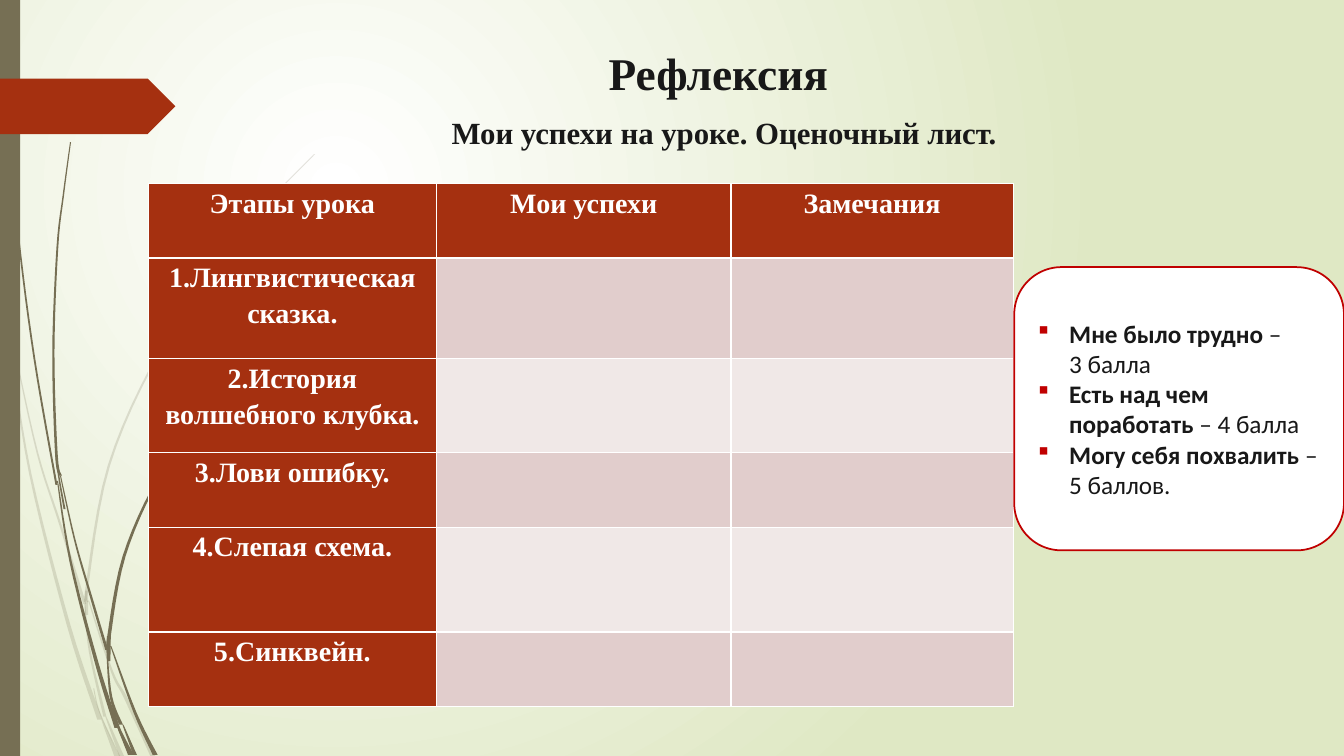
"""Build the lesson reflection slide with its score sheet."""
from dataclasses import dataclass
from lxml.etree import SubElement as Sub
from pptx import Presentation
from pptx.dml.color import RGBColor as Rgb
from pptx.enum.shapes import MSO_SHAPE as Kind
from pptx.enum.text import MSO_ANCHOR as Anchor, MSO_AUTO_SIZE as Fit, PP_ALIGN as Align
from pptx.oxml.ns import qn
from pptx.util import Pt

PX = 9144

@dataclass(frozen=True)
class Theme:
    """Colours, fonts and type sizes of the slide."""
    olive: str = "766F54"
    rust: str = "A53010"
    red: str = "C00000"
    ink: str = "181818"
    white: str = "FFFFFF"
    lime: str = "DFE8C4"
    bands: tuple = ("E1CDCC", "F0E8E7")
    serif: str = "Times New Roman"
    sans: str = "Calibri"
    title: float = 32.4
    sub: int = 22
    cell: int = 20
    note: int = 18

T = Theme()
FAINT = (
    (3, 1, (0, 290), (5, 315), (10, 350)),
    (1, 3, (14, 345), (37, 449), (60, 521), (84, 599)),
    (1, 5, (88, 596), (111, 666), (125, 693), (152, 751)),
    (1, 5, (105, 711), (121, 751)),
    (1, 5, (11, 350), (30, 470), (68, 620), (99, 714)),
    (1, 3, (84, 599), (89, 646), (104, 711)),
    (1, 3, (312, 153), (268, 198), (229, 244), (159, 348), (108, 462), (86, 584), (87, 596)),
    (1, 5, (101, 714), (116, 751)),
    (3, 3, (86, 586), (86, 610)),
    (1, 1, (93, 683), (99, 707), (119, 751)),
)
DARK = (
    (1, 2, (3, 0), (4, 48), (7, 110), (18, 232), (34, 355), (56, 481)),
    (1, 3, (60, 472), (74, 535), (90, 591), (106, 645)),
    (1, 5, (110, 641), (134, 707), (154, 749)),
    (1, 5, (57, 477), (70, 557), (96, 658), (116, 722)),
    (1, 3, (70, 141), (63, 193), (57, 245), (53, 349), (56, 451), (60, 472)),
    (1, 4, (122, 719), (134, 749)),
    (1, 2, (55, 449), (59, 477), (64, 505)),
    (1, 4, (260, 344), (231, 374), (205, 406), (157, 475), (123, 552), (108, 632), (109, 641)),
    (1, 4, (117, 722), (129, 749)),
    (1, 4, (106, 645), (110, 691), (120, 719)),
    (4, 3, (108, 631), (108, 656)),
    (1, 4, (110, 691), (117, 720), (131, 749)),
)
COLS = (286, 292, 280)
ROWS = (74, 100, 93, 74, 104, 74)
TEXTS = (
    ("Этапы урока", "Мои успехи", "Замечания"),
    ("1.Лингвистическая сказка.",),
    ("2.История волшебного клубка.",),
    ("3.Лови ошибку.",),
    ("4.Слепая схема.",),
    ("5.Синквейн.",),
)
SCORES = (
    ("Мне было трудно", " –\n3 балла"),
    ("Есть над чем поработать ", "– 4 балла"),
    ("Могу себя похвалить", " –5 баллов."),
)

def px(*nums):
    """Turn px lengths into EMU."""
    return [round(n * PX) for n in nums]

def plain(shape, hue):
    """Fill a shape and drop its outline and shadow."""
    shape.shadow.inherit = False
    shape.fill.solid()
    shape.fill.fore_color.rgb = Rgb.from_string(hue)
    shape.line.fill.background()

def style(para, face, size, hue, bold=None):
    """Set the font of a whole paragraph."""
    font = para.font
    font.name, font.size, font.bold = face, Pt(size), bold
    font.color.rgb = Rgb.from_string(hue)

def backdrop(slide):
    """Lay the radial gradient behind the slide."""
    fill = slide.background.fill
    fill.gradient()
    for stop, hue in zip(fill.gradient_stops, (T.white, T.lime)):
        stop.color.rgb = Rgb.from_string(hue)
    grad = next(slide.element.iter(qn("a:gradFill")))
    grad.remove(grad.find(qn("a:lin")))
    ring = Sub(grad, qn("a:path"), path="circle")
    Sub(ring, qn("a:fillToRect"), l="50000", t="50000", r="100000", b="100000")

def curve(pts, steps=6):
    """Sample a smooth curve through the points."""
    ends = [pts[0], *pts, pts[-1]]
    return [
        tuple(b + (c - a) * t / 2 + (2 * a - 5 * b + 4 * c - d) * t * t / 2
              + (3 * b - a - 3 * c + d) * t ** 3 / 2 for a, b, c, d in zip(*quad))
        for quad in zip(ends, ends[1:], ends[2:], ends[3:])
        for t in (k / steps for k in range(steps))
    ] + [pts[-1]]

def blade(shapes, thin, wide, *pts, alpha=100):
    """Draw one blade of grass that changes width downwards."""
    line = curve(pts)
    half = [(thin + (wide - thin) * i / (len(line) - 1)) / 2 for i in range(len(line))]
    left = [px(max(x - h, 0), y) for (x, y), h in zip(line, half)]
    right = [px(x + h, y) for (x, y), h in zip(line, half)]
    form = shapes.build_freeform(*left[0])
    form.add_line_segments(left[1:] + right[::-1], close=True)
    leaf = form.convert_to_shape()
    plain(leaf, T.olive)
    hue = next(leaf._element.spPr.iter(qn("a:srgbClr")))
    Sub(hue, qn("a:alpha"), val=str(alpha * 1000))

def block(shapes, kind, box, hue):
    """Add a preset shape."""
    shape = shapes.add_shape(kind, *px(*box))
    plain(shape, hue)
    return shape

def heading(slide):
    """Set the title and the line under it."""
    title = slide.shapes.title
    title.left, title.top, title.width, title.height = px(283, 38, 859, 68)
    sub = slide.shapes.add_textbox(*px(311, 108, 859, 47))
    for shape, text, size in ((title, "Рефлексия", T.title),
                              (sub, "Мои успехи на уроке. Оценочный лист.", T.sub)):
        frame = shape.text_frame
        frame.text, frame.word_wrap = text, True
        frame.auto_size, frame.vertical_anchor = Fit.NONE, Anchor.MIDDLE
        style(frame.paragraphs[0], T.serif, size, T.ink, True)
    title.text_frame.paragraphs[0].alignment = Align.CENTER
    frame.paragraphs[0]._p.get_or_add_pPr().set("indent", str(px(127)[0]))

def sheet(shapes):
    """Add the score sheet table."""
    box = px(147, 182, sum(COLS), sum(ROWS))
    table = shapes.add_table(len(ROWS), len(COLS), *box).table
    for col, wide in zip(table.columns, px(*COLS)):
        col.width = wide
    for r, high in enumerate(px(*ROWS)):
        table.rows[r].height = high
        for c, cell in enumerate(table.rows[r].cells):
            full = c < len(TEXTS[r])
            cell.fill.solid()
            cell.fill.fore_color.rgb = Rgb.from_string(T.rust if full else T.bands[(r - 1) % 2])
            if full:
                label(cell, TEXTS[r][c])

def label(cell, text):
    """Write a bold centred label in a cell."""
    cell.margin_left, cell.margin_right, cell.margin_top, cell.margin_bottom = px(7, 7, 0, 0)
    cell.text = text
    para = cell.text_frame.paragraphs[0]
    para.alignment, para.line_spacing, para.space_after = Align.CENTER, 1.15, Pt(15)
    style(para, T.serif, T.cell, T.white, True)

def bullet(para):
    """Give a paragraph a red square bullet."""
    props = para._p.get_or_add_pPr()
    props.set("marL", str(px(31)[0]))
    props.set("indent", str(px(-31)[0]))
    Sub(Sub(props, qn("a:buClr")), qn("a:srgbClr"), val=T.red)
    Sub(props, qn("a:buFont"), typeface="Wingdings", charset="2")
    Sub(props, qn("a:buChar"), char="§")

def legend(shapes):
    """Add the card that explains the scores."""
    card = block(shapes, Kind.ROUNDED_RECTANGLE, (1006, 265, 327, 281), T.white)
    card.line.color.rgb = Rgb.from_string(T.red)
    card.line.width = Pt(1.25)
    frame = card.text_frame
    frame.word_wrap, frame.vertical_anchor = True, Anchor.MIDDLE
    for i, parts in enumerate(SCORES):
        para = frame.add_paragraph() if i else frame.paragraphs[0]
        para.alignment = Align.LEFT
        bullet(para)
        style(para, T.sans, T.note, T.ink)
        for part, bold in zip(parts, (True, False)):
            for k, text in enumerate(part.split("\n")):
                if k:
                    para.add_line_break()
                run = para.add_run()
                run.text, run.font.bold = text, bold

def main():
    """Build and save the slide."""
    deck = Presentation()
    deck.slide_width, deck.slide_height = px(1333, 750)
    slide = deck.slides.add_slide(deck.slide_layouts[5])
    backdrop(slide)
    for stems, alpha in ((FAINT, 20), (DARK, 100)):
        for stem in stems:
            blade(slide.shapes, *stem, alpha=alpha)
    block(slide.shapes, Kind.RECTANGLE, (0, 0, 20, 750), T.olive)
    block(slide.shapes, Kind.PENTAGON, (0, 78, 174, 55), T.rust)
    heading(slide)
    sheet(slide.shapes)
    legend(slide.shapes)
    deck.save("out.pptx")

if __name__ == "__main__":
    main()
